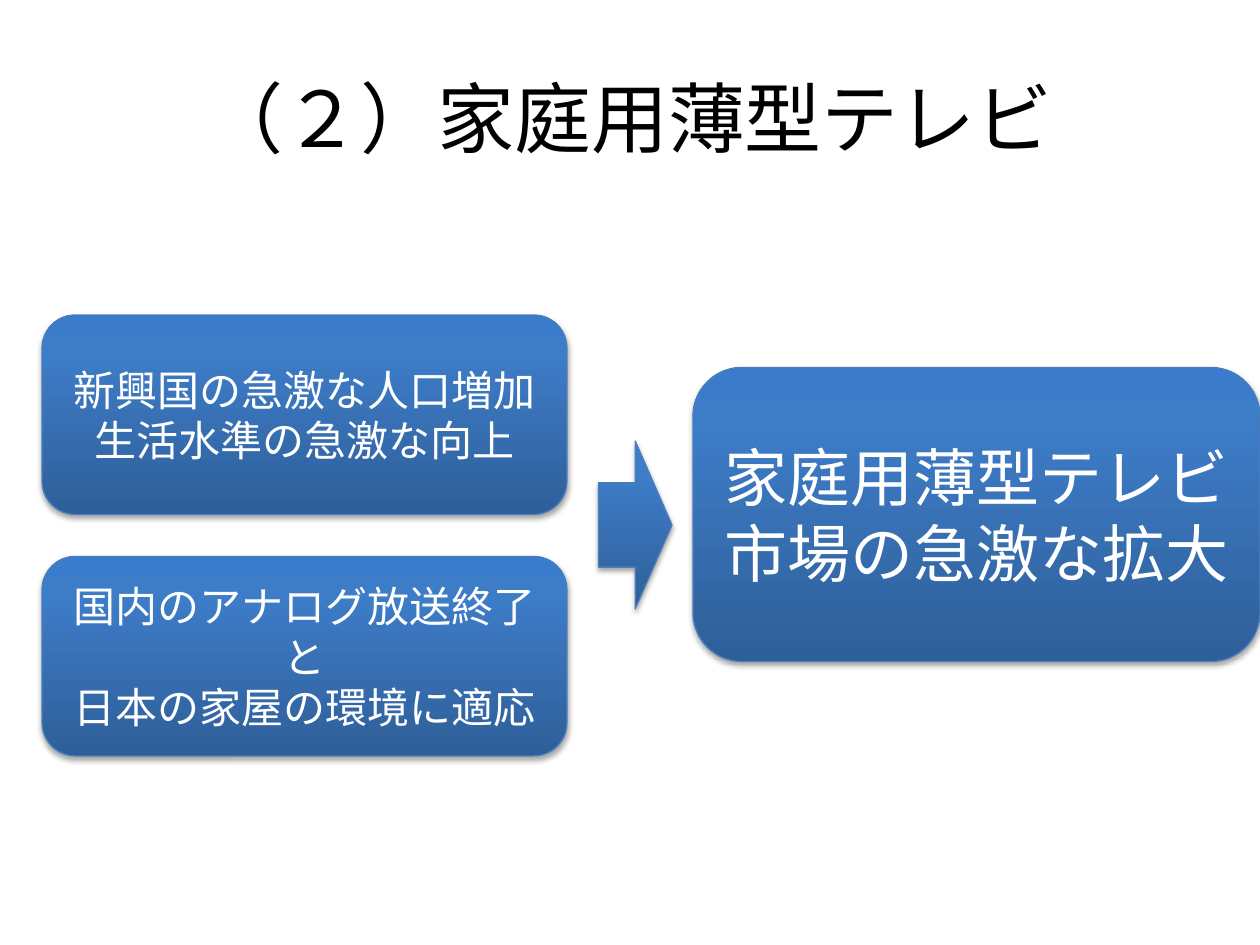
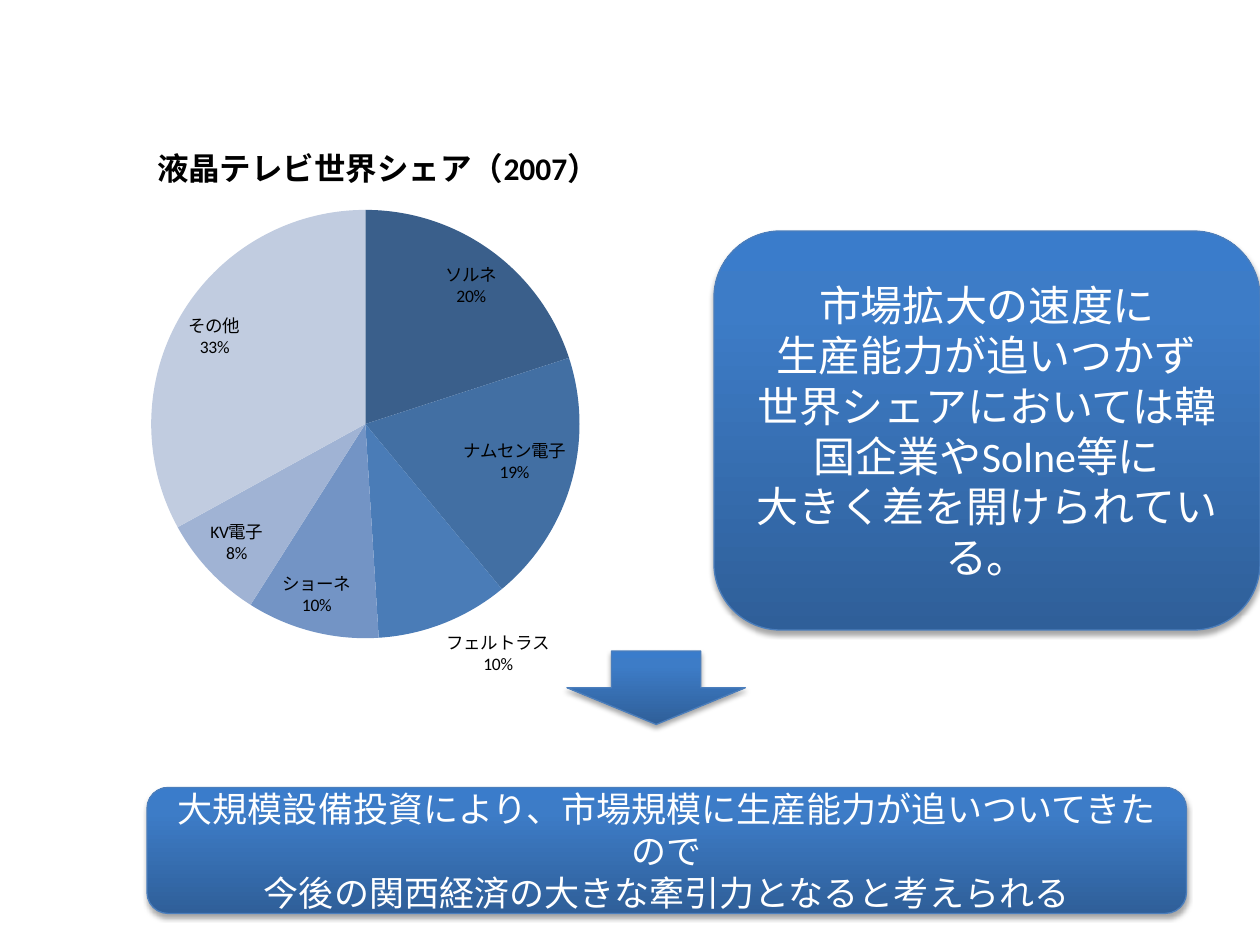
from dataclasses import dataclass

from lxml import etree
from pptx import Presentation
from pptx.chart.data import CategoryChartData
from pptx.dml.color import RGBColor
from pptx.enum.chart import XL_CHART_TYPE, XL_LABEL_POSITION
from pptx.enum.shapes import MSO_SHAPE
from pptx.enum.text import MSO_ANCHOR, PP_ALIGN
from pptx.oxml.ns import qn
from pptx.util import Pt

ROUNDED = MSO_SHAPE.ROUNDED_RECTANGLE
RIGHT_ARROW = MSO_SHAPE.RIGHT_ARROW
DOWN_ARROW = MSO_SHAPE.DOWN_ARROW
PIE = XL_CHART_TYPE.PIE
BEST_FIT = XL_LABEL_POSITION.BEST_FIT
CENTER = PP_ALIGN.CENTER
MIDDLE = MSO_ANCHOR.MIDDLE

FONT = "Calibri"
BLACK, WHITE, EDGE = "000000", "FFFFFF", "4B7EBC"
GRADIENT = [(0, "2F5F99"), (80, "3D7CC7"), (100, "3A7CCB")]
SHARES = [
    ("ソルネ", 20, "3A5F8B"),
    ("ナムセン電子", 19, "426FA3"),
    ("フェルトラス", 10, "4A7CB7"),
    ("ショーネ", 10, "7394C5"),
    ("KV電子", 8, "A0B3D4"),
    ("その他", 33, "C1CCE0"),
]
PIE_LAYOUT = {"layoutTarget": "inner", "xMode": "edge", "yMode": "edge",
              "x": 0.14, "y": 0.16, "w": 0.68, "h": 0.73}


@dataclass
class Block:
    """A glossy blue shape; place is left, top, width, height in points."""
    kind: int
    place: tuple[float, float, float, float]
    lines: tuple[str, ...] = ()
    size: float = 24


MARKET_BLOCKS = [
    Block(ROUNDED, (24, 180, 300, 114), ("新興国の急激な人口増加生活水準の急激な向上",)),
    Block(ROUNDED, (24, 318, 300, 114),
          ("国内のアナログ放送終了と", "日本の家屋の環境に適応")),
    Block(ROUNDED, (396, 210, 324, 168),
          ("家庭用薄型テレビ", "市場の急激な拡大"), 36),
    Block(RIGHT_ARROW, (342, 252, 42, 96)),
]
SHARE_BLOCKS = [
    Block(ROUNDED, (408, 132, 312, 228),
          ("市場拡大の速度に", "生産能力が追いつかず",
           "世界シェアにおいては韓国企業やSolne等に", "大きく差を開けられている。")),
    Block(DOWN_ARROW, (324, 372, 102, 42)),
    Block(ROUNDED, (84, 450, 594, 72),
          ("大規模設備投資により、市場規模に生産能力が追いついてきたので",
           "今後の関西経済の大きな牽引力となると考えられる"), 20),
]


def rgb(value: str) -> RGBColor:
    return RGBColor.from_string(value)


def add_xml(parent, tag: str, **attrs):
    return etree.SubElement(parent, qn(tag), {k: str(v) for k, v in attrs.items()})


def set_font(font, size: float, color: str, bold: bool = False) -> None:
    for name, value in {"name": FONT, "size": Pt(size), "bold": bold}.items():
        setattr(font, name, value)
    font.color.rgb = rgb(color)


def write(s, lines: tuple[str, ...], size: float, color: str) -> None:
    tf = s.text_frame
    for name, value in {"word_wrap": True, "vertical_anchor": MIDDLE}.items():
        setattr(tf, name, value)
    for i, line in enumerate(lines):
        p = tf.add_paragraph() if i else tf.paragraphs[0]
        p.alignment = CENTER
        r = p.add_run()
        r.text = line
        set_font(r.font, size, color)


def add_gloss(s) -> None:
    """Give the shape the shared gradient, edge and soft shadow."""
    s.fill.gradient()
    s.fill.gradient_angle = 90
    stops = s.element.spPr.find(".//" + qn("a:gsLst"))
    stops[:] = []
    for percent, color in GRADIENT:
        stop = add_xml(stops, "a:gs", pos=percent * 1000)
        add_xml(stop, "a:srgbClr", val=color)
    s.line.color.rgb = rgb(EDGE)
    s.line.width = Pt(0.75)
    s.shadow.inherit = False
    effects = s.element.spPr.find(qn("a:effectLst"))
    shadow = add_xml(effects, "a:outerShdw", blurRad=Pt(3.1), dist=Pt(1.8),
                     dir=5400000, rotWithShape=0)
    add_xml(add_xml(shadow, "a:srgbClr", val=BLACK), "a:alpha", val=35000)


def add_block(slide, block: Block) -> None:
    s = slide.shapes.add_shape(block.kind, *map(Pt, block.place))
    add_gloss(s)
    write(s, block.lines, block.size, WHITE)


def add_title(slide, text: str) -> None:
    s = slide.shapes.add_textbox(Pt(36), Pt(21.6), Pt(648), Pt(90))
    write(s, (text,), 44, BLACK)


def place_pie(chart) -> None:
    """Fix the plot area inside the chart frame."""
    plot_area = chart.element.find(".//" + qn("c:plotArea"))
    layout = plot_area.find(qn("c:layout"))
    if layout is None:
        layout = etree.Element(qn("c:layout"))
        plot_area.insert(0, layout)
    manual = add_xml(layout, "c:manualLayout")
    for name, value in PIE_LAYOUT.items():
        add_xml(manual, "c:" + name, val=value)


def add_share_chart(slide) -> None:
    names, values, colors = zip(*SHARES)
    data = CategoryChartData()
    data.categories = names
    data.add_series("Series 1", values)
    frame = slide.shapes.add_chart(PIE, Pt(36), Pt(66), Pt(360), Pt(336), data)
    chart = frame.chart
    set_font(chart.font, 10, BLACK)
    chart.has_legend = False
    chart.has_title = True
    r = chart.chart_title.text_frame.paragraphs[0].add_run()
    r.text = "液晶テレビ世界シェア（2007）"
    set_font(r.font, 18, BLACK, True)

    plot = chart.plots[0]
    plot.vary_by_categories = True
    for i, color in enumerate(colors):
        fill = plot.series[0].points[i].format.fill
        fill.solid()
        fill.fore_color.rgb = rgb(color)
    plot.has_data_labels = True
    labels = plot.data_labels
    for name, value in {"show_category_name": True, "show_percentage": True,
                        "show_value": False, "number_format": "0%",
                        "number_format_is_linked": False,
                        "position": BEST_FIT}.items():
        setattr(labels, name, value)
    set_font(labels.font, 10, BLACK)
    separator = etree.Element(qn("c:separator"))
    separator.text = "\n"
    last_flag = chart.element.findall(".//" + qn("c:showPercent"))[-1]
    bubble = last_flag.getparent().find(qn("c:showBubbleSize"))
    (last_flag if bubble is None else bubble).addnext(separator)
    place_pie(chart)


def main() -> None:
    prs = Presentation()
    prs.slide_width, prs.slide_height = Pt(720), Pt(540)
    blank = prs.slide_layouts[6]

    market = prs.slides.add_slide(blank)
    add_title(market, "（２）家庭用薄型テレビ")
    share = prs.slides.add_slide(blank)
    add_share_chart(share)
    for slide, blocks in ((market, MARKET_BLOCKS), (share, SHARE_BLOCKS)):
        for block in blocks:
            add_block(slide, block)
    prs.save("out.pptx")


if __name__ == "__main__":
    main()
